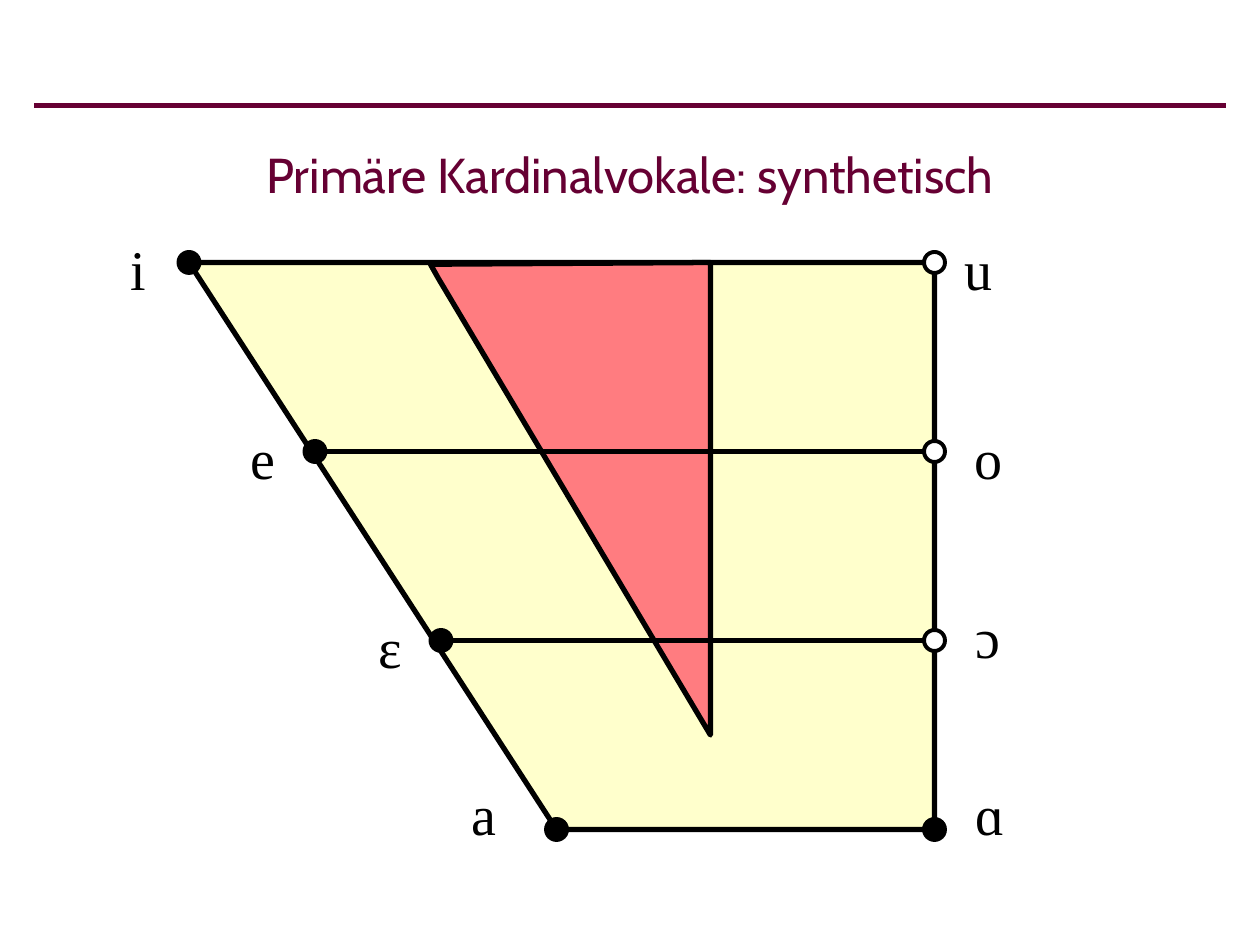
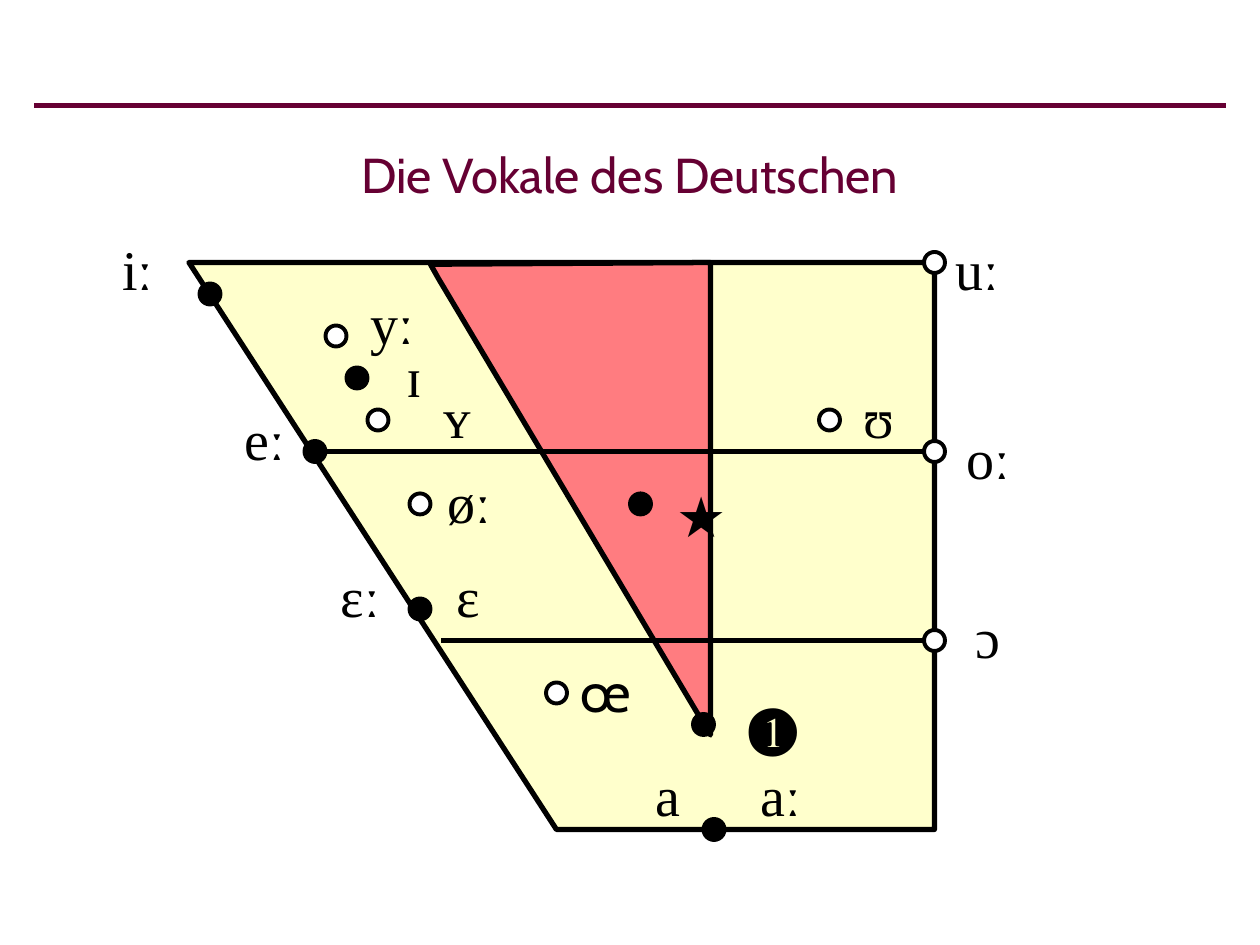
from pptx import Presentation
from pptx.dml.color import RGBColor
from pptx.enum.shapes import MSO_CONNECTOR, MSO_SHAPE
from pptx.enum.text import MSO_ANCHOR, MSO_AUTO_SIZE, PP_ALIGN
from pptx.oxml.ns import qn
from pptx.util import Pt
from lxml import etree

COLORS = {
    "plum": "660033",
    "black": "000000",
    "white": "FFFFFF",
    "cream": "FFFFCC",
    "rose": "FF7C80",
}
VOWEL_FONT = "Times New Roman"
DOT_SIZE = 12

# Chart geometry: a trapezoid with a wedge for the central vowels
BACK_X = 534
TOP_Y, CLOSE_MID_Y, OPEN_MID_Y, BOTTOM_Y = 150, 258, 366, 474
AREAS = [
    ("cream", [(108, TOP_Y), (BACK_X, TOP_Y), (BACK_X, BOTTOM_Y), (318, BOTTOM_Y)]),
    ("rose", [(246, 151), (250.5, 159), (406, 420), (406, TOP_Y)]),
]
HEIGHT_LINES = [(180, CLOSE_MID_Y), (252, OPEN_MID_Y)]
BACK_ROUNDED = [(BACK_X, y) for y in (TOP_Y, CLOSE_MID_Y, OPEN_MID_Y)]

# Dots are given by centre; labels by text, left, top, width
# and a font where it is not the usual one
CHARTS = [
    {
        "title": "Primäre Kardinalvokale: synthetisch",
        "unrounded": [(108, 150), (180, 258), (252, 366), (318, 474), (534, 474)],
        "rounded": BACK_ROUNDED,
        "labels": [
            ("e", 136, 238.3, 29),
            ("i", 67, 130.3, 24),
            ("a", 262, 442, 29),
            ("ɛ", 209, 346.3, 28),
            ("ɔ", 550, 340.6, 29),
            ("ɑ", 550, 442, 32),
            ("u", 543.6, 130.3, 31),
            ("o", 548.6, 238.3, 32),
        ],
    },
    {
        "title": "Die Vokale des Deutschen",
        "unrounded": [(120, 168), (180, 258), (240, 348), (408, 474),
                      (402, 414), (204, 216), (366, 288)],
        "rounded": BACK_ROUNDED + [(192, 192), (216, 240), (474, 240),
                                   (240, 288), (318, 396)],
        "labels": [
            ("eː", 132.5, 227.5, 38),
            ("iː", 62.6, 130.3, 32.4),
            ("aː", 427, 431.3, 38),
            ("ɛː", 187.2, 317.5, 37.4),
            ("ɔ", 550, 340.6, 29),
            ("øː", 248.4, 263.5, 39.6),
            ("uː", 538.6, 130.3, 39.6),
            ("oː", 545, 238.3, 39.6),
            ("ʊ", 486, 215.3, 32.4),
            ("★", 379.4, 271.4, 29.5, "Arial"),
            ("❶", 420.5, 391.7, 29.5),
            ("œ", 324, 371.5, 44, "Cabin"),
            ("yː", 204.5, 161.3, 39.6),
            ("ɪ", 224.6, 191.5, 24),
            ("ʏ", 246.2, 215.3, 30),
            ("ɛ", 253.4, 317.5, 28),
            ("a", 367.2, 431.3, 29),
        ],
    },
]


def add_rule(slide, left, right, y, color):
    rule = slide.shapes.add_connector(
        MSO_CONNECTOR.STRAIGHT, Pt(left), Pt(y), Pt(right), Pt(y))
    rule.line.color.rgb = RGBColor.from_string(COLORS[color])
    rule.line.width = Pt(3)
    etree.SubElement(rule._element.spPr, qn("a:effectLst"))


def add_text(slide, text, box, font, size, color):
    frame = slide.shapes.add_textbox(*(Pt(length) for length in box)).text_frame
    frame.text = text
    paragraph = frame.paragraphs[0]
    paragraph.alignment = PP_ALIGN.CENTER
    run_font = paragraph.runs[0].font
    run_font.name = font
    run_font.size = Pt(size)
    run_font.color.rgb = RGBColor.from_string(COLORS[color])
    return frame


prs = Presentation()
prs.slide_width, prs.slide_height = Pt(720), Pt(540)

for chart in CHARTS:
    slide = prs.slides.add_slide(prs.slide_layouts[6])

    # Header rule and title
    add_rule(slide, 19.5, 700.5, 60.5, "plum")
    title = add_text(slide, chart["title"], (19.5, 60.5, 680.5, 78), "Cabin", 28, "plum")
    title.word_wrap = True
    title.vertical_anchor = MSO_ANCHOR.MIDDLE

    # Vowel space
    for fill, corners in AREAS:
        start, *others = [(Pt(x), Pt(y)) for x, y in corners]
        outline = slide.shapes.build_freeform(*start)
        outline.add_line_segments(others, close=True)
        area = outline.convert_to_shape()
        area.shadow.inherit = False
        area.fill.solid()
        area.fill.fore_color.rgb = RGBColor.from_string(COLORS[fill])
        area.line.color.rgb = RGBColor.from_string(COLORS["black"])
        area.line.width = Pt(3)
    for front_x, y in HEIGHT_LINES:
        add_rule(slide, front_x, BACK_X, y, "black")

    # Vowel dots: black unrounded, white rounded
    for kind, fill in (("unrounded", "black"), ("rounded", "white")):
        for x, y in chart[kind]:
            dot = slide.shapes.add_shape(
                MSO_SHAPE.OVAL, Pt(x - DOT_SIZE / 2), Pt(y - DOT_SIZE / 2),
                Pt(DOT_SIZE), Pt(DOT_SIZE))
            dot.shadow.inherit = False
            dot.fill.solid()
            dot.fill.fore_color.rgb = RGBColor.from_string(COLORS[fill])
            dot.line.color.rgb = RGBColor.from_string(COLORS["black"])
            dot.line.width = Pt(2.25)

    # Vowel labels
    for vowel, left, top, width, *font in chart["labels"]:
        label = add_text(slide, vowel, (left, top, width, 46),
                         font[0] if font else VOWEL_FONT, 32, "black")
        label.word_wrap = False
        label.auto_size = MSO_AUTO_SIZE.SHAPE_TO_FIT_TEXT

prs.save("out.pptx")
